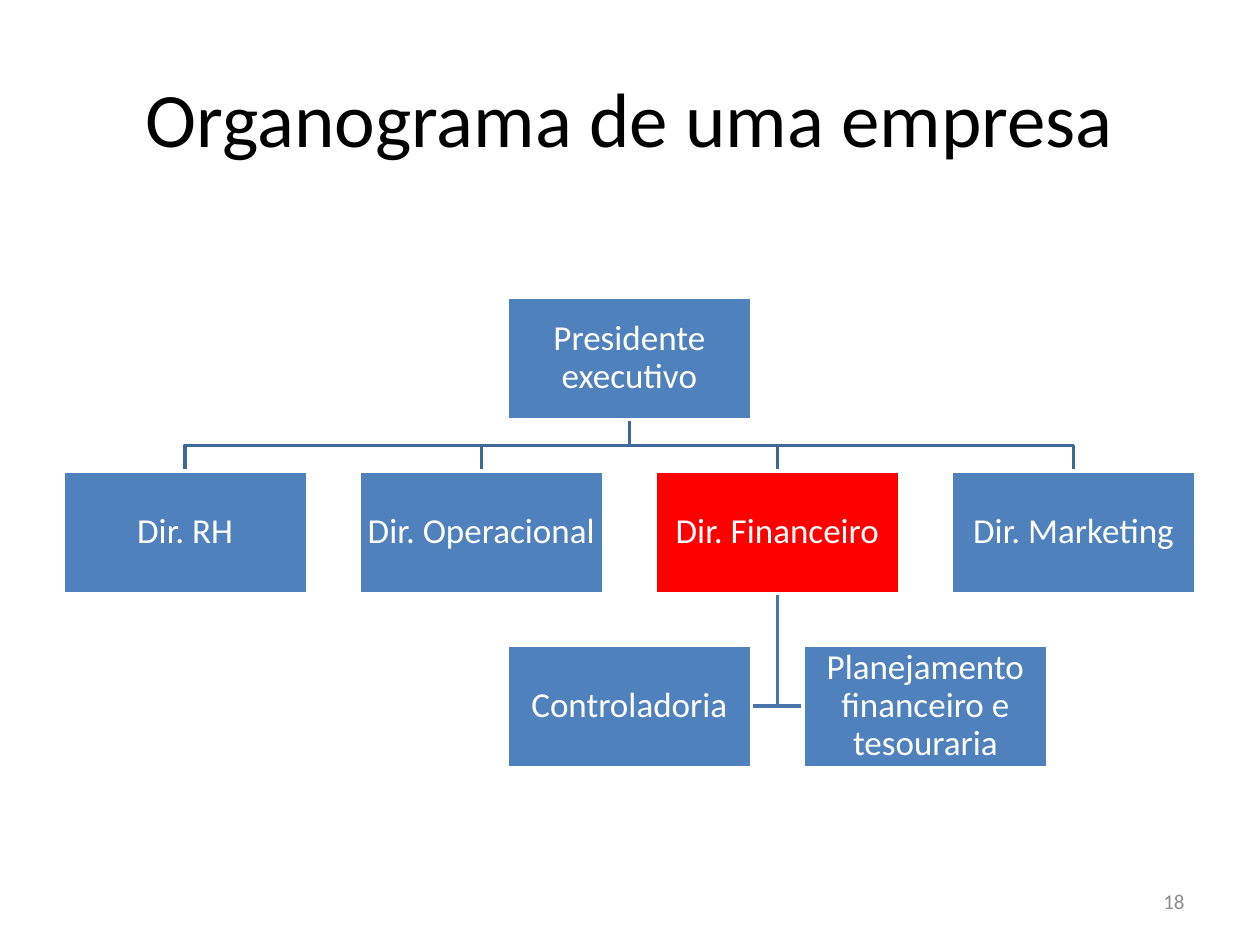
"""Build the company organisation chart slide."""
from pptx import Presentation
from pptx.dml.color import RGBColor
from pptx.enum import shapes, text
from pptx.util import Inches, Pt

BLACK = RGBColor(0x00, 0x00, 0x00)
WHITE = RGBColor(0xFF, 0xFF, 0xFF)
GRAY = RGBColor(0x8C, 0x8C, 0x8C)
BLUE = RGBColor(0x4F, 0x81, 0xBD)
RED = RGBColor(0xFF, 0x00, 0x00)
BOARD_LINE = RGBColor(0x3F, 0x67, 0x97)
TEAM_LINE = RGBColor(0x48, 0x75, 0xAC)

LEFT, TOP = 0.5, 2.36
COLUMN_STEP, ROW_STEP = 2.35, 1.38
WIDTH, HEIGHT = 1.94, 0.97


def write(frame, words, size, color, align):
    frame.word_wrap = True
    frame.vertical_anchor = text.MSO_ANCHOR.MIDDLE
    paragraph = frame.paragraphs[0]
    paragraph.alignment = align
    run = paragraph.add_run()
    run.text = words
    run.font.name = "Calibri"
    run.font.size = Pt(size)
    run.font.color.rgb = color
    return paragraph


def draw_branch(points, color):
    start, *bends = [(Inches(x), Inches(y)) for x, y in points]
    builder = slide.shapes.build_freeform(*start)
    builder.add_line_segments(bends, close=False)
    branch = builder.convert_to_shape()
    branch.shadow.inherit = False
    branch.fill.background()
    branch.line.color.rgb = color
    branch.line.width = Pt(2)


prs = Presentation()
prs.slide_width, prs.slide_height = Inches(10), Inches(7.5)
slide = prs.slides.add_slide(prs.slide_layouts[5])

title = slide.shapes.title
title.left, title.top = Inches(0.5), Inches(0.3)
title.width, title.height = Inches(9), Inches(1.25)
write(title.text_frame, "Organograma de uma empresa", 44, BLACK, text.PP_ALIGN.CENTER)

president_x = LEFT + 1.5 * COLUMN_STEP + WIDTH / 2
president_bottom = TOP + HEIGHT
directors_top = TOP + ROW_STEP
middle_y = (president_bottom + directors_top) / 2
for column in range(4):
    director_x = LEFT + column * COLUMN_STEP + WIDTH / 2
    draw_branch([(president_x, president_bottom), (president_x, middle_y),
                 (director_x, middle_y), (director_x, directors_top)], BOARD_LINE)

finance_x = LEFT + 2 * COLUMN_STEP + WIDTH / 2
finance_bottom = directors_top + HEIGHT
team_y = TOP + 2 * ROW_STEP + HEIGHT / 2
half_gap = (COLUMN_STEP - WIDTH) / 2
for side in (-1, 1):
    draw_branch([(finance_x, finance_bottom), (finance_x, team_y),
                 (finance_x + side * half_gap, team_y)], TEAM_LINE)

positions = [
    ("Presidente executivo", 1.5, 0, BLUE),
    ("Dir. RH", 0, 1, BLUE),
    ("Dir. Operacional", 1, 1, BLUE),
    ("Dir. Financeiro", 2, 1, RED),
    ("Dir. Marketing", 3, 1, BLUE),
    ("Controladoria", 1.5, 2, BLUE),
    ("Planejamento financeiro e tesouraria", 2.5, 2, BLUE),
]
for role, column, row, color in positions:
    box = slide.shapes.add_shape(
        shapes.MSO_SHAPE.RECTANGLE,
        Inches(LEFT + column * COLUMN_STEP), Inches(TOP + row * ROW_STEP),
        Inches(WIDTH), Inches(HEIGHT))
    box.shadow.inherit = False
    box.fill.solid()
    box.fill.fore_color.rgb = color
    box.line.color.rgb = WHITE
    box.line.width = Pt(2)
    frame = box.text_frame
    frame.margin_left = frame.margin_right = Inches(0.01)
    frame.margin_top = frame.margin_bottom = Inches(0.01)
    write(frame, role, 20, WHITE, text.PP_ALIGN.CENTER).line_spacing = 0.9

page_number = slide.shapes.add_textbox(Inches(7.17), Inches(6.95), Inches(2.33), Inches(0.4))
write(page_number.text_frame, "18", 12, GRAY, text.PP_ALIGN.RIGHT)

prs.save("out.pptx")
